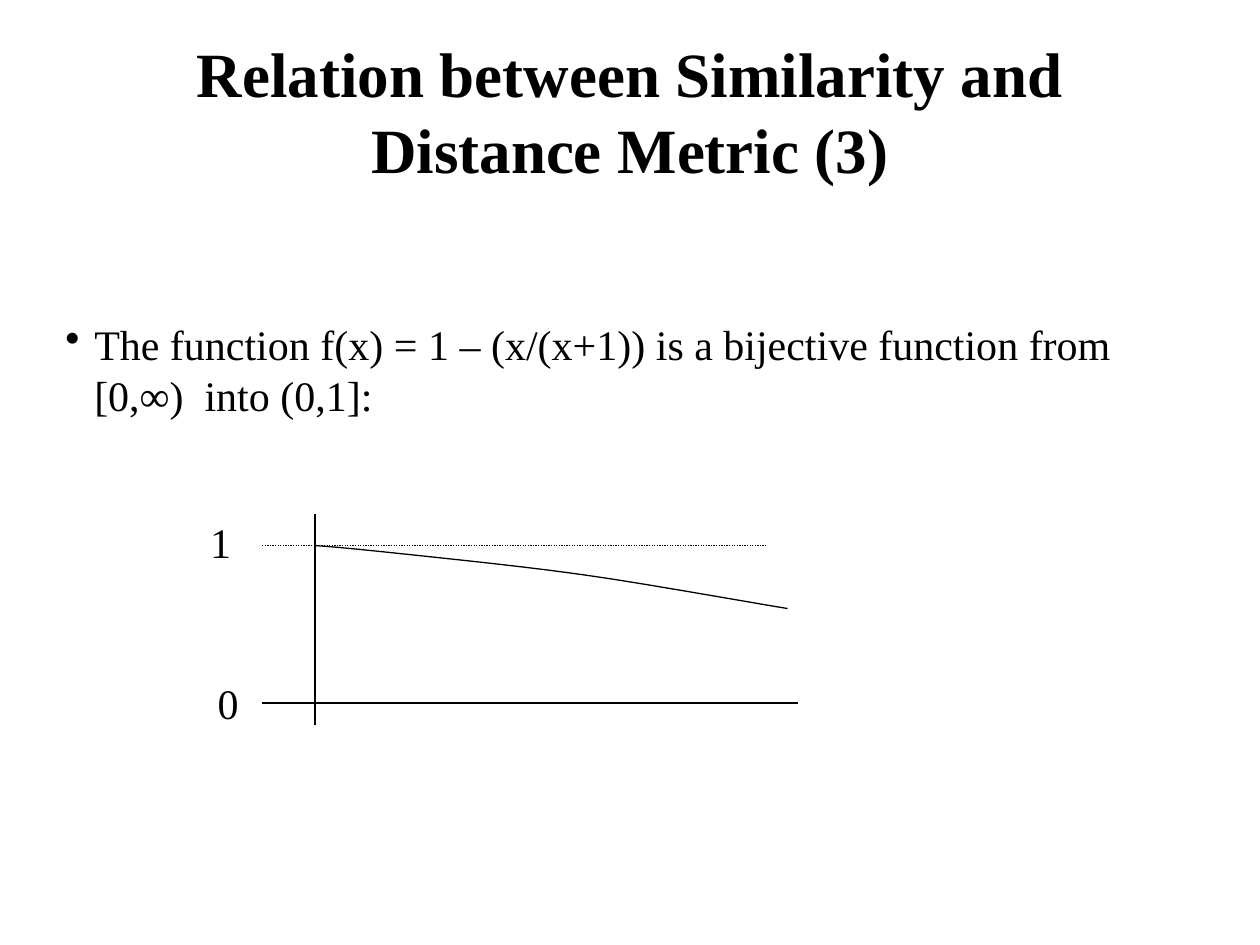
from pptx import Presentation
from pptx.dml.color import RGBColor
from pptx.enum.dml import MSO_LINE
from pptx.enum.shapes import MSO_CONNECTOR
from pptx.enum.text import MSO_ANCHOR as Anchor, PP_ALIGN as Align
from pptx.oxml.ns import qn
from pptx.util import Inches, Pt
from lxml.etree import SubElement

BLACK = RGBColor(0, 0, 0)


def write_text(frame, text, size=24, bold=False, font="Times New Roman",
               color=BLACK, align=Align.LEFT, bullet_indent=None):
    paragraph = frame.paragraphs[0]
    paragraph.alignment = align
    run = paragraph.add_run()
    run.text = text
    run.font.name = font
    run.font.size = Pt(size)
    run.font.bold = bold
    run.font.color.rgb = color
    if bullet_indent is not None:
        properties = paragraph._p.get_or_add_pPr()
        properties.set("marL", str(Inches(bullet_indent)))
        properties.set("indent", str(-Inches(bullet_indent)))
        SubElement(properties, qn("a:buChar")).set("char", "•")


def bezier_points(start, curves, steps=12):
    """Points along a chain of cubic curves, without the start."""
    for first, second, end in curves:
        for step in range(1, steps + 1):
            t = step / steps
            u = 1 - t
            yield tuple(u**3 * a + 3 * u * u * t * b + 3 * u * t * t * c + t**3 * d
                        for a, b, c, d in zip(start, first, second, end))
        start = end


class SlideBuilder:
    def __init__(self, slide, line_color=BLACK, line_width=0.75):
        self.slide = slide
        self.line_color = line_color
        self.line_width = Pt(line_width)

    def style_line(self, line):
        line.color.rgb = self.line_color
        line.width = self.line_width

    def text(self, left, top, width, height, text, anchor=Anchor.TOP, wrap=True, **text_format):
        shape = self.slide.shapes.add_textbox(*map(Inches, (left, top, width, height)))
        shape.text_frame.word_wrap = wrap
        shape.text_frame.vertical_anchor = anchor
        write_text(shape.text_frame, text, **text_format)

    def line(self, x1, y1, x2, y2, dash=None):
        connector = self.slide.shapes.add_connector(
            MSO_CONNECTOR.STRAIGHT, *map(Inches, (x1, y1, x2, y2)))
        self.style_line(connector.line)
        if dash is not None:
            connector.line.dash_style = dash
        SubElement(connector._element.spPr, qn("a:effectLst"))

    def curve(self, start, curves):
        builder = self.slide.shapes.build_freeform(*map(Inches, start))
        points = [tuple(map(Inches, point)) for point in bezier_points(start, curves)]
        builder.add_line_segments(points, close=False)
        shape = builder.convert_to_shape()
        shape.shadow.inherit = False
        shape.fill.background()
        self.style_line(shape.line)


def main():
    presentation = Presentation()
    presentation.slide_width = Inches(10)
    presentation.slide_height = Inches(7.5)
    builder = SlideBuilder(presentation.slides.add_slide(presentation.slide_layouts[6]))

    # Title and statement
    builder.text(0.75, 0.25, 8.5, 1.25, "Relation between Similarity and Distance Metric (3)",
                 anchor=Anchor.MIDDLE, size=36, bold=True, align=Align.CENTER)
    builder.text(0.42, 2.08, 8.83, 1.3,
                 "The function f(x) = 1 – (x/(x+1)) is a bijective function from [0,∞)  into (0,1]:",
                 anchor=Anchor.BOTTOM, bullet_indent=0.23)

    # Axes and the upper bound
    axis_x, zero_y, one_y, left = 2.5, 5.58, 4.33, 2.08
    builder.line(axis_x, 4.08, axis_x, 5.75)
    builder.line(left, zero_y, 6.33, zero_y)
    builder.line(left, one_y, 6.08, one_y, dash=MSO_LINE.ROUND_DOT)

    # Axis labels
    builder.text(1.63, 5.33, 0.37, 0.5, "0", wrap=False)
    builder.text(1.57, 4.05, 0.37, 0.5, "1", wrap=False)

    # Function graph
    builder.curve((axis_x, one_y), [
        ((2.77, 4.35), (3.04, 4.38), (3.42, 4.42)),
        ((3.79, 4.46), (4.28, 4.51), (4.75, 4.58)),
        ((5.22, 4.65), (6, 4.79), (6.25, 4.83)),
    ])

    presentation.save("out.pptx")


if __name__ == "__main__":
    main()
